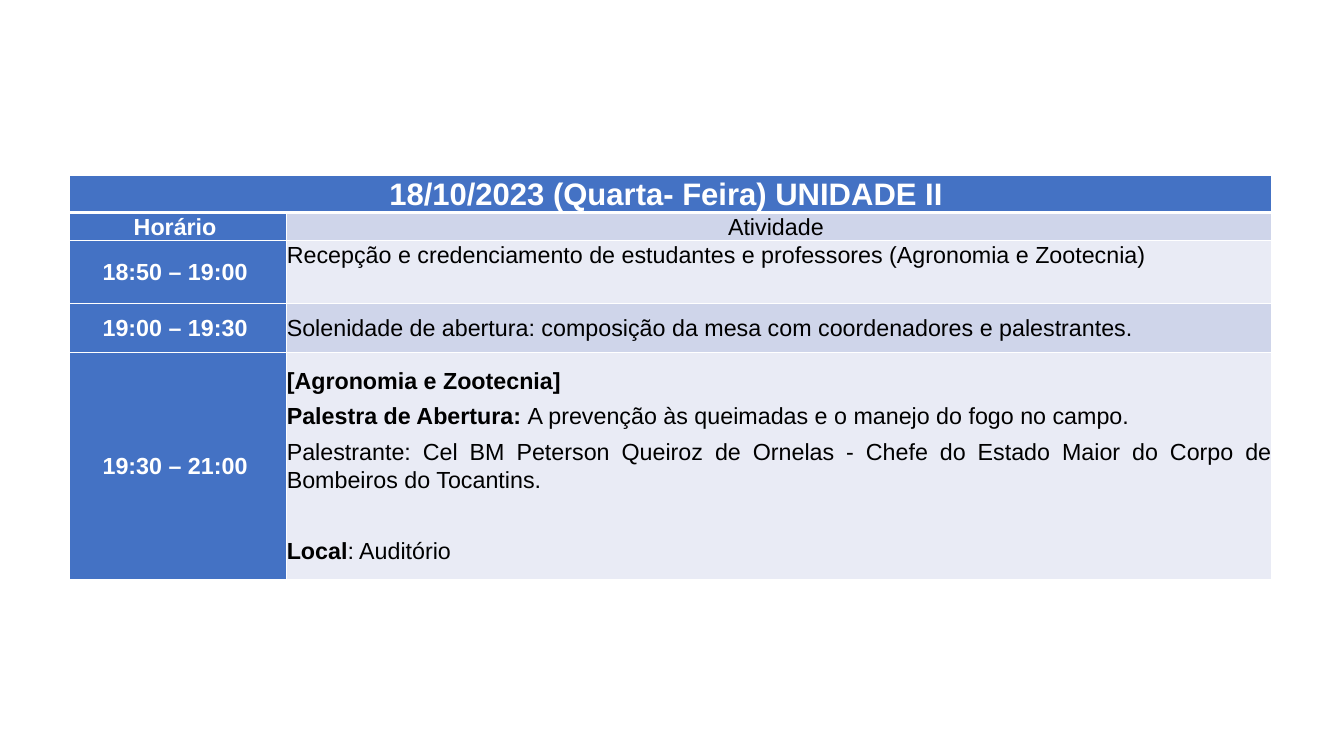
from dataclasses import dataclass
from lxml.etree import SubElement
from pptx import Presentation
from pptx.dml.color import RGBColor
from pptx.enum.text import MSO_ANCHOR, PP_ALIGN
from pptx.oxml.ns import qn
from pptx.util import Emu, Pt


@dataclass(frozen=True)
class Theme:
    """Colours, font and type sizes of the schedule."""
    font: str = "Arial"
    title: int = 32
    body: int = 24
    blue: str = "4472C4"
    dark: str = "CFD5EA"
    light: str = "E9EBF5"
    white: str = "FFFFFF"
    black: str = "000000"


THEME = Theme()
COLS = (311, 1411)
ROWS = (52, 40, 90, 70, 325)
TITLE = "18/10/2023 (Quarta- Feira) UNIDADE II "
TIMES = ("Horário ", "18:50 – 19:00 ", "19:00 – 19:30 ", "19:30 – 21:00 ")
EVENTS = (
    [[("Atividade ", False)]],
    [[("Recepção e credenciamento de estudantes e professores (Agronomia e Zootecnia)", False)]],
    [[("Solenidade de abertura: composição da mesa com coordenadores e palestrantes.", False)]],
    [
        [("[Agronomia e Zootecnia]", True)],
        [("Palestra de Abertura: ", True),
         ("A prevenção às queimadas e o manejo do fogo no campo.", False)],
        [("Palestrante: Cel BM Peterson Queiroz de Ornelas - Chefe do Estado Maior "
          "do Corpo de Bombeiros do Tocantins.", False)],
        [("Local", True), (": Auditório", False)],
    ],
)


def px(count):
    """Turn px into EMU at 100 px to the inch."""
    return Emu(count * 9144)


def add_edges(cell, top=1, bottom=1):
    """Draw white borders, with widths in points."""
    props = cell._tc.get_or_add_tcPr()
    for side, width in (("L", 1), ("R", 1), ("T", top), ("B", bottom)):
        line = SubElement(props, qn(f"a:ln{side}"), w=str(Pt(width)))
        fill = SubElement(line, qn("a:solidFill"))
        SubElement(fill, qn("a:srgbClr"), val=THEME.white)


def paint(cell, fill, anchor, top=1, bottom=1):
    """Set the borders, fill, margins and anchor of a cell."""
    add_edges(cell, top, bottom)
    cell.fill.solid()
    cell.fill.fore_color.rgb = RGBColor.from_string(fill)
    cell.margin_left = cell.margin_right = cell.margin_top = cell.margin_bottom = 0
    cell.vertical_anchor = anchor


def write(cell, lines, color, align, size=THEME.body):
    """Fill a cell with paragraphs of (text, bold) runs."""
    frame = cell.text_frame
    for index, parts in enumerate(lines):
        para = frame.add_paragraph() if index else frame.paragraphs[0]
        para.alignment = align
        para.line_spacing = 1.07
        para.space_after = Pt(8)
        for text, bold in parts:
            run = para.add_run()
            run.text = text
            run.font.name = THEME.font
            run.font.size = Pt(size)
            run.font.bold = bold
            run.font.color.rgb = RGBColor.from_string(color)


def add_grid(slide):
    """Add the empty table with its column and row sizes."""
    frame = slide.shapes.add_table(
        len(ROWS), len(COLS), px(100), px(251), px(sum(COLS)), px(sum(ROWS)))
    table = frame.table
    table.first_row = table.horz_banding = False
    for column, width in zip(table.columns, COLS):
        column.width = px(width)
    for row, height in zip(table.rows, ROWS):
        row.height = px(height)
    return table


def add_title(table):
    """Merge the top row and write the date."""
    for cell in table.rows[0].cells:
        paint(cell, THEME.blue, MSO_ANCHOR.TOP, bottom=3)
    head = table.cell(0, 0)
    head.merge(table.cell(0, 1))
    write(head, [[(TITLE, True)]], THEME.white, PP_ALIGN.CENTER, THEME.title)


def add_event(table, row, time, lines):
    """Write one time slot and its activity."""
    left, right = table.rows[row].cells
    top = 3 if row == 1 else 1
    anchor = MSO_ANCHOR.TOP if row == 1 else MSO_ANCHOR.MIDDLE
    paint(left, THEME.blue, anchor, top)
    write(left, [[(time, True)]], THEME.white, PP_ALIGN.CENTER)
    paint(right, THEME.dark if row % 2 else THEME.light,
          MSO_ANCHOR.TOP if row < 3 else anchor, top)
    align = PP_ALIGN.CENTER if row == 1 else PP_ALIGN.JUSTIFY
    write(right, lines, THEME.black, align)


def main():
    """Build the schedule slide."""
    deck = Presentation()
    deck.slide_width, deck.slide_height = px(1926), px(1083)
    slide = deck.slides.add_slide(deck.slide_layouts[6])
    table = add_grid(slide)
    add_title(table)
    for row, (time, lines) in enumerate(zip(TIMES, EVENTS), 1):
        add_event(table, row, time, lines)
    place = table.cell(len(ROWS) - 1, 1).text_frame.paragraphs[-1]
    place.space_before = Pt(37)
    deck.save("out.pptx")


if __name__ == "__main__":
    main()
